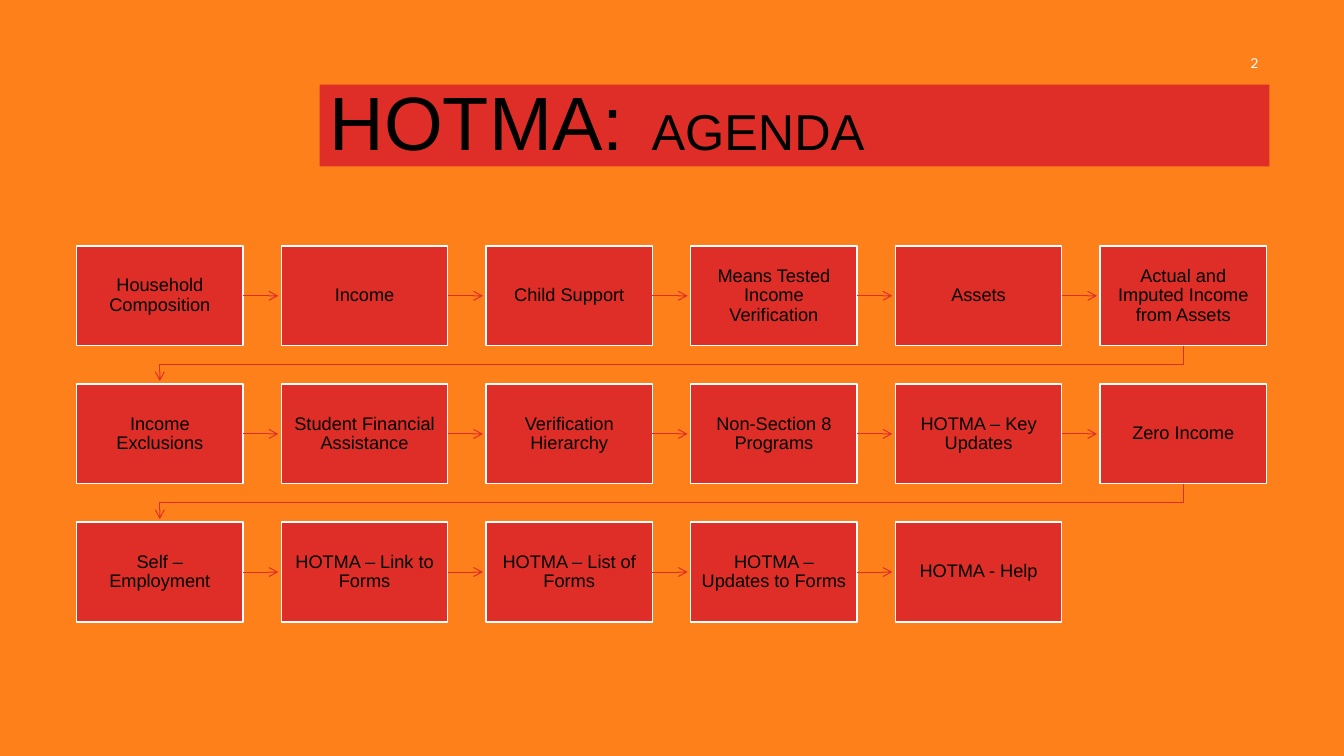
from pptx import Presentation, util as u
from pptx.dml.color import RGBColor
from pptx.enum import shapes, text
from pptx.oxml.ns import qn
from lxml import etree

RED, WHITE, BLACK, ORANGE = "DF2E28", "FFFFFF", "000000", "FE801A"
TOPICS = [
    "Household Composition", "Income", "Child Support",
    "Means Tested Income Verification", "Assets",
    "Actual and Imputed Income from Assets",
    "Income Exclusions", "Student Financial Assistance",
    "Verification Hierarchy", "Non-Section 8 Programs",
    "HOTMA – Key Updates", "Zero Income",
    "Self – Employment", "HOTMA – Link to Forms",
    "HOTMA – List of Forms", "HOTMA – Updates to Forms", "HOTMA - Help",
]
COLUMNS = 6
LEFT, TOP = u.Inches(0.76), u.Inches(2.44)
BOX_WIDTH, BOX_HEIGHT = u.Inches(1.65), u.Inches(0.99)
STEP_X, STEP_Y = u.Inches(2.03), u.Inches(1.37)
ARROW_LENGTH = u.Inches(0.35)
BEND_DROP = u.Inches(0.19)


def rgb(value):
    return RGBColor.from_string(value)


def style_font(font, size, color=BLACK, name="Arial"):
    font.name = name
    font.size = u.Pt(size)
    font.color.rgb = rgb(color)


def add_red_box(page, left, top, width, height):
    box = page.shapes.add_shape(shapes.MSO_SHAPE.RECTANGLE, left, top, width, height)
    box.shadow.inherit = False
    box.fill.solid()
    box.fill.fore_color.rgb = rgb(RED)
    box.line.fill.background()
    frame = box.text_frame
    frame.word_wrap = True
    frame.vertical_anchor = text.MSO_ANCHOR.MIDDLE
    frame.paragraphs[0].line_spacing = 0.9
    return box


def add_title(page):
    box = add_red_box(page, u.Inches(3.17), u.Inches(0.84), u.Inches(9.42), u.Inches(0.81))
    para = box.text_frame.paragraphs[0]
    para.alignment = text.PP_ALIGN.LEFT
    for words, size in (("HOTMA:", 54), (" ", 54), ("AGENDA", 36)):
        span = para.add_run()
        span.text = words
        style_font(span.font, size)
    # Widen the single space between the two parts of the title
    para.runs[1].font._element.set("spc", "500")


def add_page_number(page, number):
    box = page.shapes.add_textbox(u.Inches(9.58), u.Inches(0.42), u.Inches(3), u.Inches(0.4))
    frame = box.text_frame
    frame.word_wrap = True
    frame.vertical_anchor = text.MSO_ANCHOR.MIDDLE
    para = frame.paragraphs[0]
    para.text = number
    para.alignment = text.PP_ALIGN.RIGHT
    style_font(para.runs[0].font, 10.5, WHITE, "League Spartan")


def add_topic(page, topic, left, top):
    box = add_red_box(page, left, top, BOX_WIDTH, BOX_HEIGHT)
    box.line.color.rgb = rgb(WHITE)
    box.line.width = u.Pt(1)
    frame = box.text_frame
    frame.margin_left = frame.margin_right = u.Inches(0.08)
    frame.margin_top = frame.margin_bottom = u.Inches(0.08)
    para = frame.paragraphs[0]
    para.text = topic
    para.alignment = text.PP_ALIGN.CENTER
    style_font(para.runs[0].font, 13)
    return box


def style_arrow(arrow):
    arrow.line.color.rgb = rgb(RED)
    arrow.line.width = u.Pt(0.75)
    etree.SubElement(arrow.line._get_or_add_ln(), qn("a:tailEnd"), type="arrow")


def add_arrow_right(page, box):
    start, middle = box.left + box.width, box.top + box.height // 2
    arrow = page.shapes.add_connector(
        shapes.MSO_CONNECTOR.STRAIGHT, start, middle, start + ARROW_LENGTH, middle)
    arrow.begin_connect(box, 3)
    style_arrow(arrow)
    etree.SubElement(arrow._element.spPr, qn("a:effectLst"))


def add_arrow_to_next_row(page, box):
    start_x, start_y = box.left + box.width // 2, box.top + box.height
    end_x = LEFT + BOX_WIDTH // 2
    bend_y = start_y + BEND_DROP
    builder = page.shapes.build_freeform(start_x, start_y)
    builder.add_line_segments(
        [(start_x, bend_y), (end_x, bend_y), (end_x, start_y + ARROW_LENGTH)], close=False)
    arrow = builder.convert_to_shape()
    arrow.shadow.inherit = False
    arrow.fill.background()
    style_arrow(arrow)


def add_agenda(page):
    for index, topic in enumerate(TOPICS):
        row, column = divmod(index, COLUMNS)
        box = add_topic(page, topic, LEFT + column * STEP_X, TOP + row * STEP_Y)
        if index == len(TOPICS) - 1:
            continue
        if column == COLUMNS - 1:
            add_arrow_to_next_row(page, box)
        else:
            add_arrow_right(page, box)


def main():
    deck = Presentation()
    deck.slide_width, deck.slide_height = u.Inches(13.33), u.Inches(7.5)
    page = deck.slides.add_slide(deck.slide_layouts[6])
    page.background.fill.solid()
    page.background.fill.fore_color.rgb = rgb(ORANGE)
    add_title(page)
    add_agenda(page)
    add_page_number(page, "2")
    deck.save("out.pptx")


if __name__ == "__main__":
    main()
